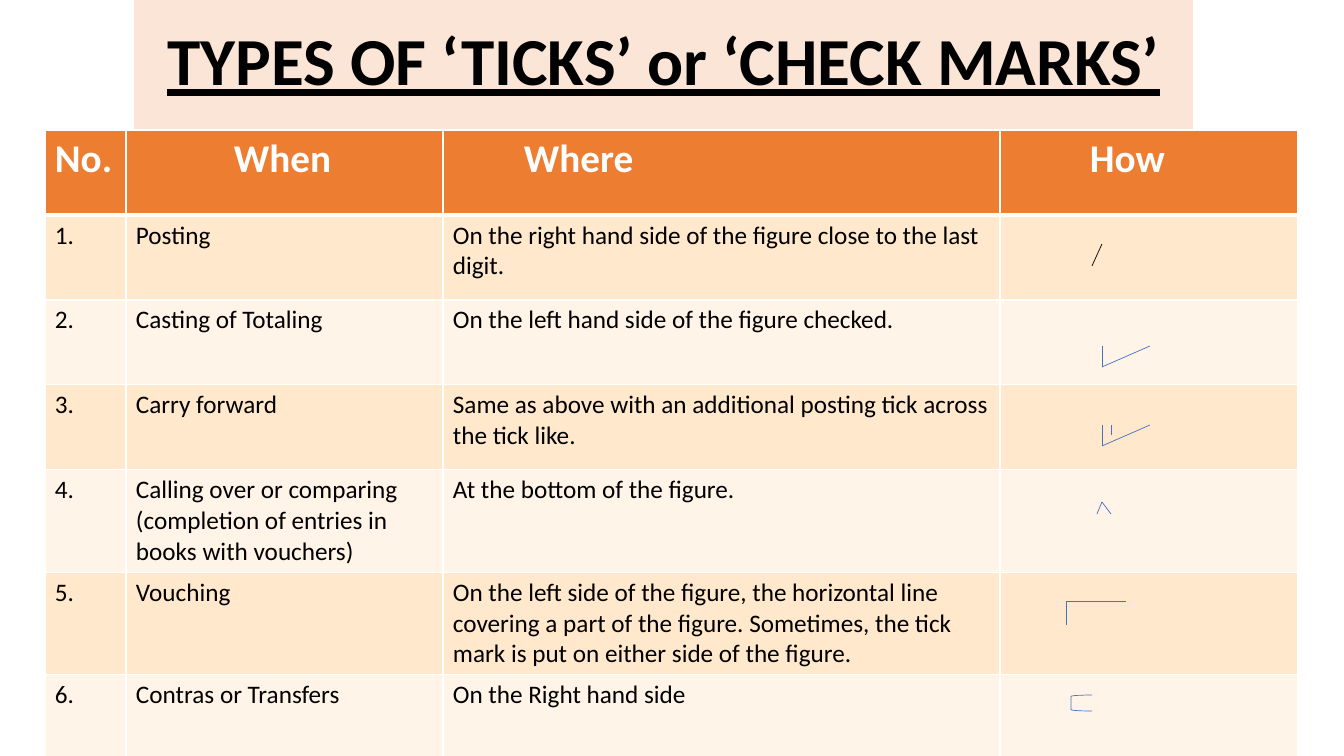
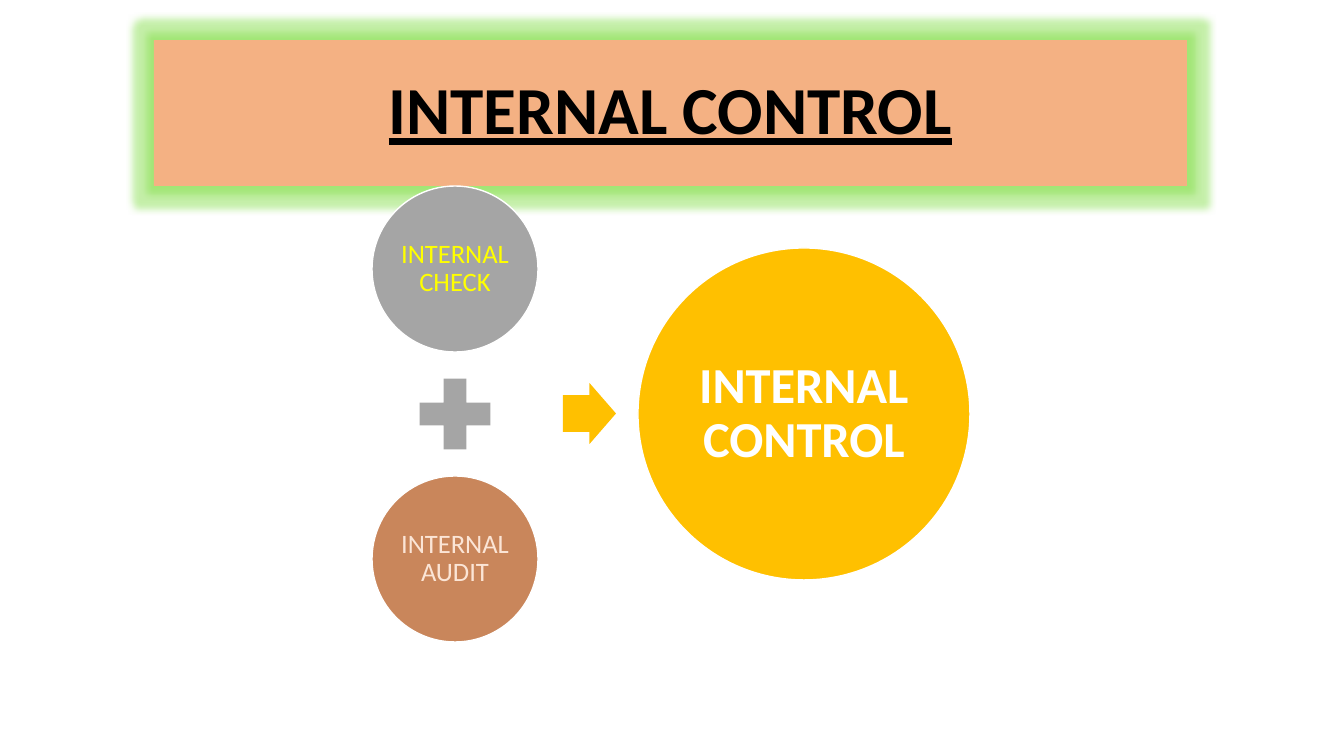
import typing
import dataclasses
import lxml.etree
import pptx
import pptx.util
import pptx.dml.color
import pptx.enum.shapes
import pptx.enum.text
import pptx.oxml.ns

SCALE = 914400 / 100.8
FONT = "Calibri"
HUES = {
    "white": "FFFFFF",
    "black": "000000",
    "blush": "FBE5D6",
    "peach": "F4B183",
    "orange": "ED7D31",
    "sand": "FFE8CC",
    "cream": "FFF4E7",
    "blue": "4472C4",
    "grey": "A5A5A5",
    "clay": "C9865B",
    "gold": "FFC000",
    "yellow": "FFFF00",
    "green": "6ED92A",
}
SHAPE = pptx.enum.shapes.MSO_SHAPE
ALIGN = pptx.enum.text.PP_ALIGN
MIDDLE = pptx.enum.text.MSO_ANCHOR.MIDDLE


class Box(typing.NamedTuple):
    left: int
    top: int
    width: int
    height: int


class Line(typing.NamedTuple):
    x1: int
    y1: int
    x2: int
    y2: int
    hue: str = "blue"


class Head(typing.NamedTuple):
    text: str
    width: int
    inset: int


@dataclasses.dataclass
class Ball:
    text: str
    box: Box
    fill: str
    hue: str
    size: int
    inset: int
    bold: bool = False


HEADS = [Head("No.", 81, 10), Head("When", 317, 108),
         Head("Where", 557, 81), Head("How", 298, 90)]
ROWS = [
    ("Posting", "On the right hand side of the figure close to the last digit."),
    ("Casting of Totaling", "On the left hand side of the figure checked."),
    ("Carry forward",
     "Same as above with an additional posting tick across the tick like."),
    ("Calling over or comparing (completion of entries in books with vouchers)",
     "At the bottom of the figure."),
    ("Vouching",
     "On the left side of the figure, the horizontal line covering a part of the "
     "figure. Sometimes, the tick mark is put on either side of the figure."),
    ("Contras or Transfers", "On the Right hand side"),
]
ROW_HEIGHT = 85
TICKS = [
    Line(1102, 244, 1092, 266, "black"),
    *[Line(1102, base, x, base - 21) for base in (367, 446) for x in (1150, 1102)],
    Line(1111, 435, 1111, 425),
    *[Line(1102, 502, x, 514) for x in (1097, 1111)],
    Line(1066, 601, 1126, 601),
    Line(1066, 601, 1066, 625),
]
BALLS = [
    Ball("INTERNAL CHECK", Box(372, 186, 166, 166), "grey", "yellow", 19, 3),
    Ball("INTERNAL AUDIT", Box(372, 476, 166, 166), "clay", "blush", 19, 3),
    Ball("INTERNAL CONTROL", Box(638, 248, 332, 332), "gold", "white", 36, 5, True),
]


def px(count: int) -> int:
    return round(count * SCALE)


def color(hue: str):
    return pptx.dml.color.RGBColor.from_string(HUES[hue])


def child(node, tag: str, **attrs: str):
    return lxml.etree.SubElement(node, pptx.oxml.ns.qn(tag), attrs)


def style(frame, size: int, hue: str, bold: bool = False, under: bool = False) -> None:
    for para in frame.paragraphs:
        for run in para.runs:
            font = run.font
            font.name, font.size = FONT, pptx.util.Pt(size)
            font.bold, font.underline = bold, under
            font.color.rgb = color(hue)


def center(frame, text: str) -> None:
    frame.text = text
    frame.word_wrap = True
    frame.vertical_anchor = MIDDLE
    para = frame.paragraphs[0]
    para.alignment = ALIGN.CENTER
    para.line_spacing = 0.9


def add_form(slide, kind, box: Box, fill: str = "", edge: str = "", width: float = 1):
    form = slide.shapes.add_shape(kind, *map(px, box))
    form.shadow.inherit = False
    if fill:
        form.fill.solid()
        form.fill.fore_color.rgb = color(fill)
    else:
        form.fill.background()
    if edge:
        form.line.color.rgb = color(edge)
        form.line.width = pptx.util.Pt(width)
    else:
        form.line.fill.background()
    return form


def add_title(slide, text: str, box: Box, fill: str):
    form = add_form(slide, SHAPE.RECTANGLE, box, fill)
    center(form.text_frame, text)
    style(form.text_frame, 48, "black", True, True)
    return form


def add_glow(form, hue: str, reach: int) -> None:
    effects = form._element.spPr.find(pptx.oxml.ns.qn("a:effectLst"))
    glow = child(effects, "a:glow", rad=str(px(reach)))
    tint = child(glow, "a:srgbClr", val=HUES[hue])
    child(tint, "a:alpha", val="40000")


def add_line(slide, line: Line) -> None:
    kind = pptx.enum.shapes.MSO_CONNECTOR.STRAIGHT
    link = slide.shapes.add_connector(kind, *map(px, line[:4]))
    link.line.color.rgb = color(line.hue)
    link.line.width = pptx.util.Pt(0.5)
    child(link._element.spPr, "a:effectLst")


def fill_cell(cell, text: str, fill: str, head: bool, inset: int) -> None:
    props = cell._tc.get_or_add_tcPr()
    for side in "LRTB":
        width = 3 if head and side == "B" else 1
        edge = child(props, f"a:ln{side}", w=str(pptx.util.Pt(width)))
        child(child(edge, "a:solidFill"), "a:srgbClr", val=HUES["white"])
    cell.fill.solid()
    cell.fill.fore_color.rgb = color(fill)
    cell.margin_left = px(inset)
    if text:
        cell.text_frame.text = text
        if head:
            style(cell.text_frame, 28, "white", True)
        else:
            style(cell.text_frame, 18, "black")


def add_grid(slide) -> None:
    count = len(ROWS) + 1
    width = sum(head.width for head in HEADS)
    box = Box(45, 130, width, count * ROW_HEIGHT)
    grid = slide.shapes.add_table(count, len(HEADS), *map(px, box)).table
    grid.horz_banding = False
    for row in grid.rows:
        row.height = px(ROW_HEIGHT)
    for col, head in enumerate(HEADS):
        grid.columns[col].width = px(head.width)
        fill_cell(grid.cell(0, col), head.text, "orange", True, head.inset)
    for num, (when, where) in enumerate(ROWS, 1):
        fill = "sand" if num % 2 else "cream"
        for col, text in enumerate((f"{num}.", when, where, "")):
            fill_cell(grid.cell(num, col), text, fill, False, 10)


def add_ball(slide, ball: Ball) -> None:
    form = add_form(slide, SHAPE.OVAL, ball.box, ball.fill, "white")
    frame = form.text_frame
    frame.margin_left = frame.margin_right = px(ball.inset)
    frame.margin_top = frame.margin_bottom = px(ball.inset)
    center(frame, ball.text)
    style(frame, ball.size, ball.hue, ball.bold)


def draw_ticks(slide) -> None:
    add_title(slide, "TYPES OF ‘TICKS’ or ‘CHECK MARKS’",
              Box(134, -2, 1059, 132), "blush")
    add_grid(slide)
    for tick in TICKS:
        add_line(slide, tick)
    hook = add_form(slide, SHAPE.RIGHT_BRACKET, Box(1071, 695, 21, 16),
                    edge="blue", width=0.5)
    hook.rotation = 180


def draw_sum(slide) -> None:
    title = add_title(slide, "INTERNAL CONTROL", Box(154, 40, 1033, 146), "peach")
    add_glow(title, "green", 15)
    for ball in BALLS:
        add_ball(slide, ball)
    add_form(slide, SHAPE.MATH_PLUS, Box(407, 366, 96, 96), "grey")
    arrow = add_form(slide, SHAPE.RIGHT_ARROW, Box(563, 383, 53, 61), "gold")
    arrow.adjustments[0] = 0.6
    arrow.adjustments[1] = 0.5


def main() -> None:
    deck = pptx.Presentation()
    deck.slide_width, deck.slide_height = px(1344), px(756)
    for draw in (draw_ticks, draw_sum):
        draw(deck.slides.add_slide(deck.slide_layouts[6]))
    deck.save("out.pptx")


if __name__ == "__main__":
    main()
